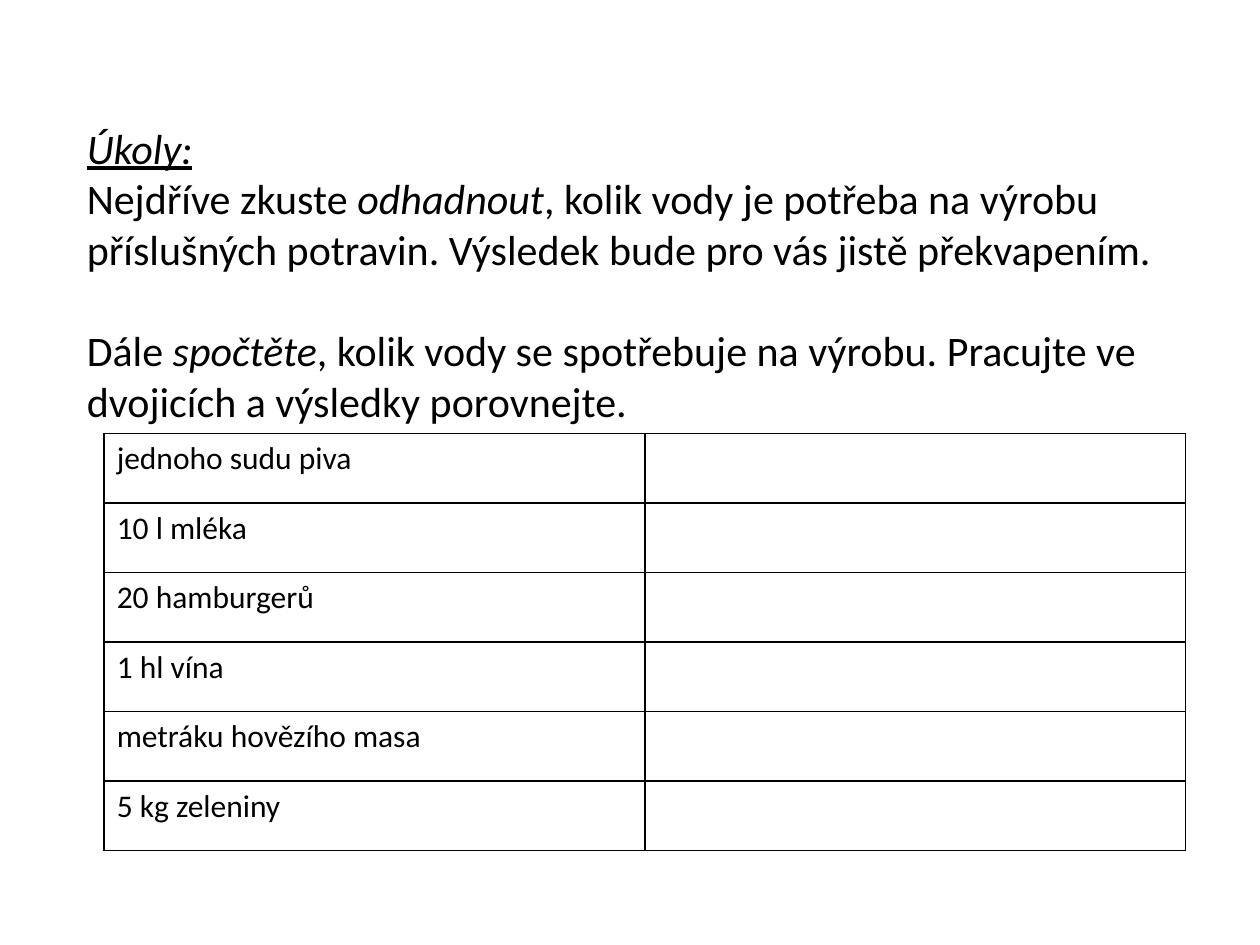
import pptx
import pptx.util
import pptx.dml.color
import pptx.enum.text
import lxml.etree
from dataclasses import dataclass
from pptx.util import Cm, Pt


@dataclass(frozen=True)
class Theme:
    font: str = "Calibri"
    ink: str = "000000"
    body: int = 24
    cell: int = 18
    border: float = 1


theme = Theme()
A = "http://schemas.openxmlformats.org/drawingml/2006/main"


def set_font(p, size):
    p.font.name = theme.font
    p.font.size = Pt(size)
    p.font.color.rgb = pptx.dml.color.RGBColor.from_string(theme.ink)


def set_borders(cell):
    tcPr = cell._tc.get_or_add_tcPr()
    for i, side in enumerate(("lnL", "lnR", "lnT", "lnB")):
        ln = lxml.etree.Element(f"{{{A}}}{side}", w=str(Pt(theme.border)))
        fill = lxml.etree.SubElement(ln, f"{{{A}}}solidFill")
        lxml.etree.SubElement(fill, f"{{{A}}}srgbClr", val=theme.ink)
        tcPr.insert(i, ln)


prs = pptx.Presentation()
prs.slide_width, prs.slide_height = Cm(25.4), Cm(19.05)
s = prs.slides.add_slide(prs.slide_layouts[6])

# Task text: each line is a list of (text, style) runs
lines = [
    [("Úkoly:", "heading")],
    [("Nejdříve zkuste ", ""), ("odhadnout", "italic"),
     (", kolik vody je potřeba na výrobu", "")],
    [("příslušných potravin. Výsledek bude pro vás jistě překvapením.", "")],
    [("Dále ", ""), ("spočtěte", "italic"),
     (", kolik vody se spotřebuje na výrobu. Pracujte ve", "")],
    [("dvojicích a výsledky porovnejte.", "")],
]
second_task = 3
sp = s.shapes.add_textbox(Cm(1.5), Cm(2.34), Cm(23.37), Cm(8.46))
tf = sp.text_frame
tf.word_wrap = True
tf.vertical_anchor = pptx.enum.text.MSO_ANCHOR.TOP
for i, runs in enumerate(lines):
    p = tf.paragraphs[0] if i == 0 else tf.add_paragraph()
    set_font(p, theme.body)
    if i == second_task:
        p.space_before = Pt(29.3)
    for text, style in runs:
        r = p.add_run()
        r.text = text
        if style:
            r.font.italic = True
        if style == "heading":
            r.font.underline = True

# Table of foods with an empty answer column
foods = ["jednoho sudu piva", "10 l mléka", "20 hamburgerů",
         "1 hl vína", "metráku hovězího masa", "5 kg zeleniny"]
tbl = s.shapes.add_table(len(foods), 2, Cm(2.1), Cm(8.74),
                         Cm(21.8), Cm(8.4)).table
tbl.first_row = tbl.horz_banding = False
for row, food in zip(tbl.rows, foods):
    row.cells[0].text = food
    for cell in row.cells:
        set_font(cell.text_frame.paragraphs[0], theme.cell)
        cell.fill.background()
        set_borders(cell)

prs.save("out.pptx")
